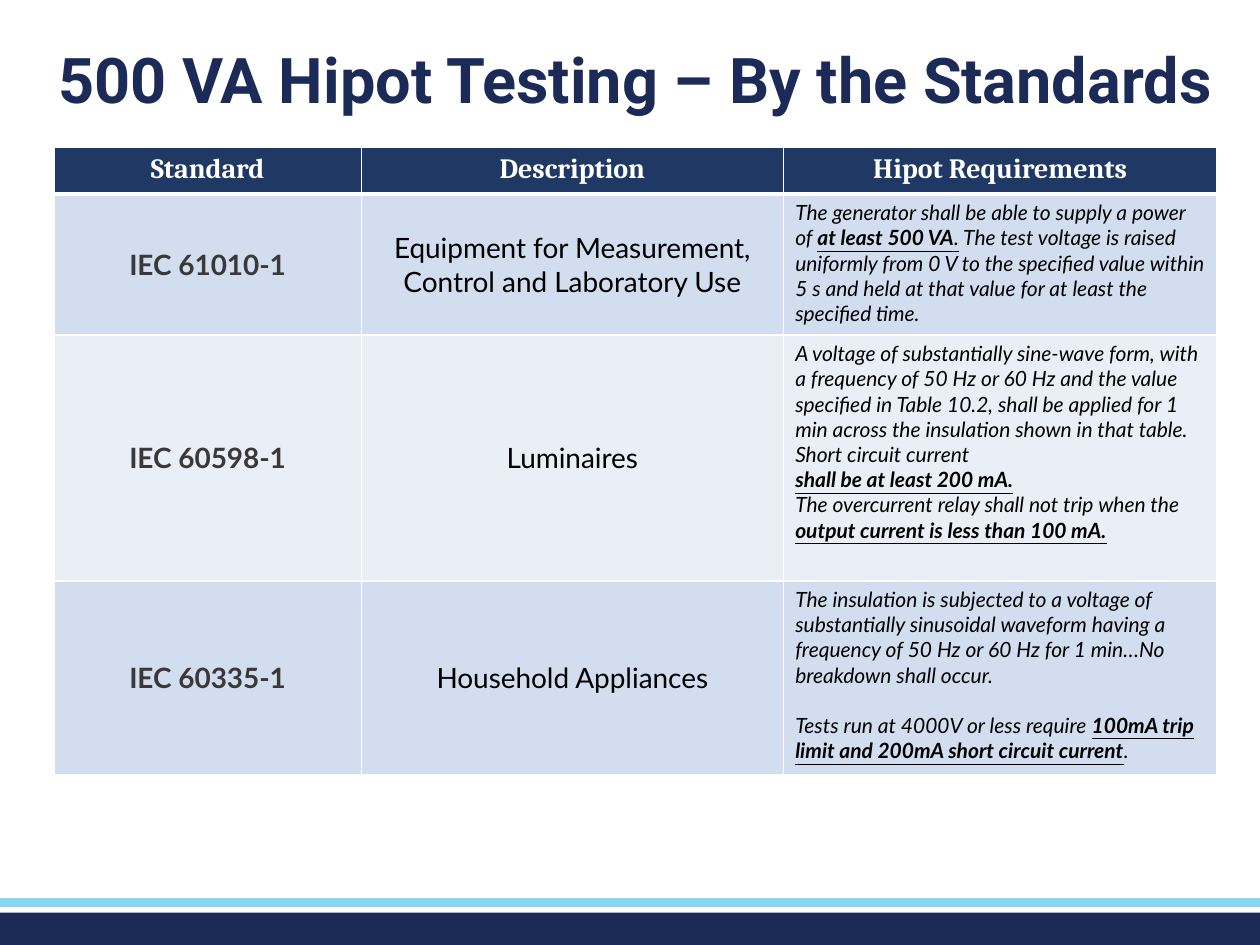
import pptx
import pptx.util
import pptx.dml.color
import pptx.enum.text
import pptx.enum.shapes
import pptx.oxml

Pt = pptx.util.Pt
RGB = pptx.dml.color.RGBColor.from_string
ALIGN = pptx.enum.text.PP_ALIGN
MIDDLE = pptx.enum.text.MSO_ANCHOR.MIDDLE
TOP = pptx.enum.text.MSO_ANCHOR.TOP

theme = {
    "navy": "1C2A58", "sky": "88D6F4", "head": "203864", "white": "FFFFFF",
    "bands": ("D2DEEF", "EAEFF7"), "code": "3B3838", "black": "000000",
    "title": 36, "label": 16, "note": 12,
}


def write(frame, paras, font="Lato", size=theme["label"], color=theme["black"],
          bold=False, italic=False, align=ALIGN.CENTER, space=None, gap=0):
    """Each paragraph is a list of (text, marks); mark b is bold, u underlined.
    gap is the space before the last paragraph."""
    for n, runs in enumerate(paras):
        para = frame.paragraphs[0] if n == 0 else frame.add_paragraph()
        para.alignment = align
        if space:
            para.line_spacing = space
        if gap and n == len(paras) - 1:
            para.space_before = Pt(gap)
        for text, marks in runs:
            run = para.add_run()
            run.text = text
            run.font.name = font
            run.font.size = Pt(size)
            run.font.color.rgb = RGB(color)
            run.font.bold = bold or "b" in marks
            run.font.italic = italic
            run.font.underline = "u" in marks


def edge(cell, low):
    """White borders, with the bottom one of the given width."""
    props = cell._tc.get_or_add_tcPr()
    for side, width in (("L", 1), ("R", 1), ("T", 1), ("B", low)):
        props.append(pptx.oxml.parse_xml(
            f'<a:ln{side} xmlns:a="http://schemas.openxmlformats.org/drawingml/2006/main"'
            f' w="{Pt(width)}"><a:solidFill><a:srgbClr val="{theme["white"]}"/>'
            f'</a:solidFill></a:ln{side}>'))


deck = pptx.Presentation()
deck.slide_width, deck.slide_height = Pt(720), Pt(540)
slide = deck.slides.add_slide(deck.slide_layouts[5])

# Footer bands
for top, high, color in ((521.5, 18.5, "navy"), (513.3, 5, "sky")):
    band = slide.shapes.add_shape(pptx.enum.shapes.MSO_SHAPE.RECTANGLE,
                                  0, Pt(top), Pt(720), Pt(high))
    band.shadow.inherit = False
    band.fill.solid()
    band.fill.fore_color.rgb = RGB(theme[color])
    band.line.fill.background()

# Title
title = slide.shapes.title
title.left, title.top, title.width, title.height = Pt(6), Pt(24), Pt(714), Pt(47.5)
title.text_frame.auto_size = pptx.enum.text.MSO_AUTO_SIZE.NONE
title.text_frame.vertical_anchor = MIDDLE
write(title.text_frame, [[("500 VA Hipot Testing – By the Standards", "")]],
      font="Roboto", size=theme["title"], color=theme["navy"], bold=True, space=0.9)

# Table content
heads = ("Standard", "Description", "Hipot Requirements")
rows = [
    ("IEC 61010-1", "Equipment for Measurement, Control and Laboratory Use", [
        [("The generator shall be able to supply a power of ", ""),
         ("at least 500 VA", "bu"), (".", "u"),
         (" The test voltage is raised uniformly from 0 V to the specified value "
          "within 5 s and held at that value for at least the specified time.", "")],
    ], 0),
    ("IEC 60598-1", "Luminaires", [
        [("A voltage of substantially sine-wave form, with a frequency of 50 Hz "
          "or 60 Hz and the value", "")],
        [("specified in Table 10.2, shall be applied for 1 min across the insulation "
          "shown in that table. Short circuit current", "")],
        [("shall be at least 200 mA.", "bu")],
        [("The overcurrent relay shall not trip when the ", ""),
         ("output current is less than 100 mA.", "bu")],
    ], 0),
    ("IEC 60335-1", "Household Appliances", [
        [("The insulation is subjected to a voltage of substantially sinusoidal "
          "waveform having a", "")],
        [("frequency of 50 Hz or 60 Hz for 1 min…No breakdown shall occur.", "")],
        [("Tests run at 4000V or less require ", ""),
         ("100mA trip limit and 200mA short circuit current", "bu"), (".", "")],
    ], 14.4),
]

# Table grid
wide = (175.7, 241.2, 247.7)
tall = (26.6, 80.6, 140.4, 110.9)
grid = slide.shapes.add_table(len(tall), len(wide), Pt(30.8), Pt(84.3),
                              Pt(sum(wide)), Pt(sum(tall))).table
for col, width in zip(grid.columns, wide):
    col.width = Pt(width)
for n, (row, height) in enumerate(zip(grid.rows, tall)):
    row.height = Pt(height)
    for c, cell in enumerate(row.cells):
        edge(cell, 1 if n else 3)
        cell.fill.solid()
        cell.fill.fore_color.rgb = RGB(theme["bands"][(n - 1) % 2] if n else theme["head"])
        cell.margin_left = cell.margin_right = Pt(6.75)
        cell.margin_top = cell.margin_bottom = Pt(3.4)
        cell.vertical_anchor = MIDDLE if n and c < 2 else TOP

# Header row
for c, head in enumerate(heads):
    write(grid.cell(0, c).text_frame, [[(head, "")]], font="Cambria",
          color=theme["white"], bold=True)

# Standards
for n, (code, use, rule, gap) in enumerate(rows, 1):
    write(grid.cell(n, 0).text_frame, [[(code, "")]], color=theme["code"], bold=True)
    write(grid.cell(n, 1).text_frame, [[(use, "")]])
    write(grid.cell(n, 2).text_frame, rule, size=theme["note"], italic=True,
          align=ALIGN.LEFT, gap=gap)

deck.save("out.pptx")
